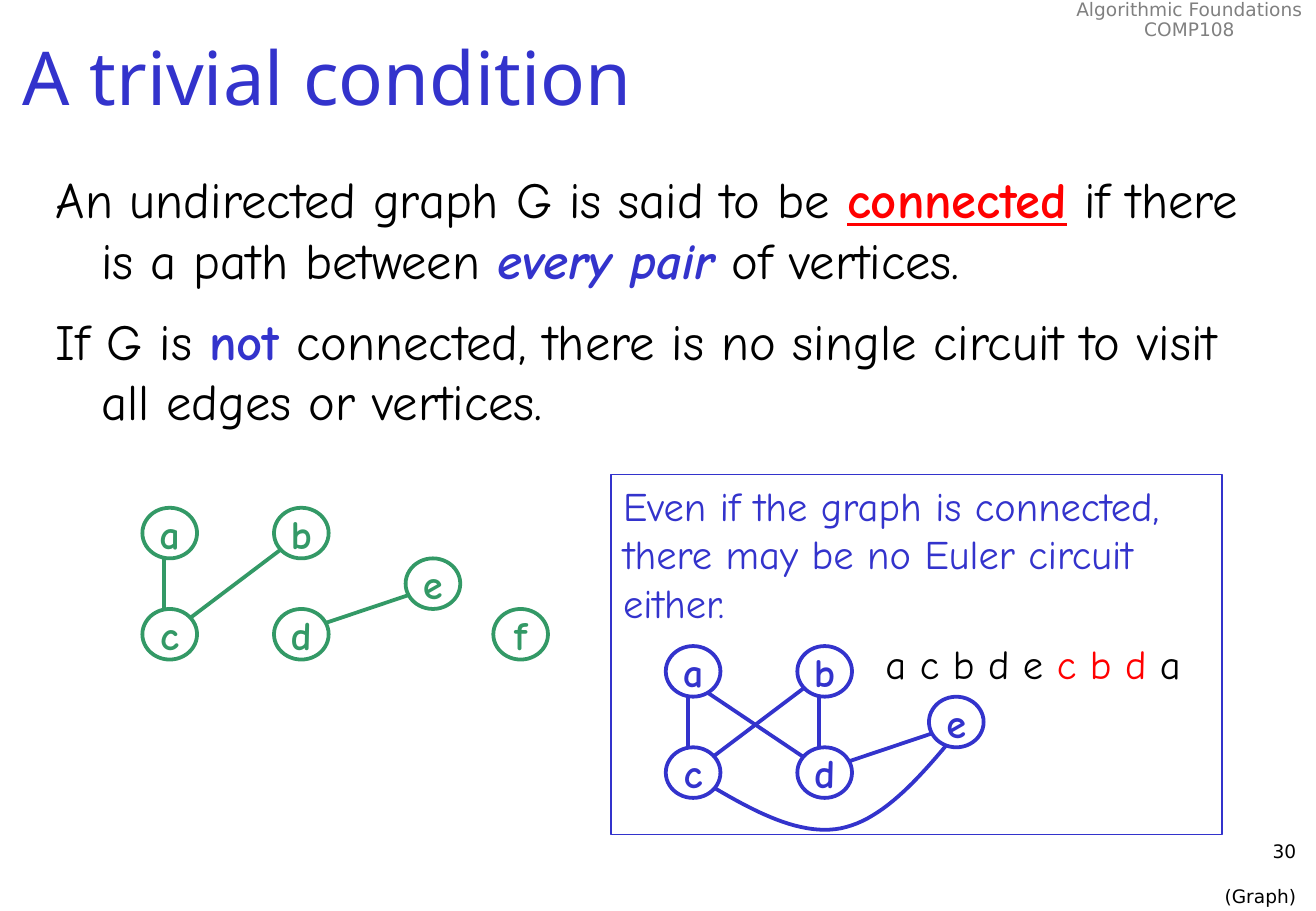
from dataclasses import dataclass

from lxml import etree
from pptx import Presentation
from pptx.dml.color import RGBColor
from pptx.enum import shapes, text
from pptx.oxml.ns import qn
from pptx.util import Pt


@dataclass(frozen=True)
class Theme:
    blue: str = "3333CC"
    green: str = "339966"
    red: str = "FF0000"
    black: str = "000000"
    grey: str = "808080"
    white: str = "FFFFFF"
    title_font: str = "Noto Sans"
    body_font: str = "Comic Neue"
    label_font: str = "DejaVu Sans"
    title: int = 44
    body: int = 30
    note: int = 24
    label: int = 11
    edge: float = 2.25
    frame: float = 0.75


T = Theme()
LEFT, CENTER, RIGHT = text.PP_ALIGN.LEFT, text.PP_ALIGN.CENTER, text.PP_ALIGN.RIGHT
NODE_W, NODE_H = 32.4, 30
COL, ROW = 78, 60
NODES = {"a": (0, 0), "b": (COL, 0), "c": (0, ROW), "d": (COL, ROW),
         "e": (2 * COL, ROW / 2), "f": (208, ROW)}


def rgb(color):
    return RGBColor.from_string(color)


def style(font, name, size, color, bold=False):
    font.name, font.size, font.bold = name, Pt(size), bold
    font.color.rgb = rgb(color)


def add_text(s, box, wrap=True):
    tf = s.shapes.add_textbox(*map(Pt, box)).text_frame
    tf.word_wrap = wrap
    return tf


def add_lines(tf, lines, align, *font):
    """Fill the frame with one paragraph per line, all in the same font."""
    for i, line in enumerate(lines):
        p = tf.paragraphs[0] if i == 0 else tf.add_paragraph()
        p.text, p.alignment = line, align
        style(p.font, *font)
    return tf.paragraphs


def add_runs(p, runs):
    """Add (text, font changes) pairs to a paragraph."""
    for words, look in runs:
        r = p.add_run()
        r.text = words
        if "color" in look:
            r.font.color.rgb = rgb(look["color"])
        for flag in ("bold", "italic", "underline"):
            if flag in look:
                setattr(r.font, flag, True)


def add_box(s, kind, box, color, width):
    sp = s.shapes.add_shape(kind, *map(Pt, box))
    sp.shadow.inherit = False
    sp.fill.solid()
    sp.fill.fore_color.rgb = rgb(T.white)
    sp.line.color.rgb, sp.line.width = rgb(color), Pt(width)
    return sp


def course_header(s, box):
    tf = add_text(s, box, wrap=False)
    for p in add_lines(tf, ["Algorithmic Foundations", "COMP108"], CENTER,
                       T.label_font, T.label, T.grey):
        p.line_spacing = 0.9


def page_footer(s, box):
    lines = add_lines(add_text(s, box), ["30", "(Graph)"], RIGHT,
                      T.label_font, T.label, T.black)
    lines[1].space_before = Pt(13)


def title(s, box):
    tf = add_text(s, box)
    tf.vertical_anchor = text.MSO_ANCHOR.MIDDLE
    add_lines(tf, ["A trivial condition"], LEFT, T.title_font, T.title, T.blue)


def definitions(s, box):
    paragraphs = [
        [("An undirected graph G is said to be ", {}),
         ("connected", dict(color=T.red, bold=True, underline=True)),
         (" if there is a path between ", {}),
         ("every pair", dict(color=T.blue, bold=True, italic=True)),
         (" of vertices.", {})],
        [("If G is ", {}),
         ("not", dict(color=T.blue, bold=True)),
         (" connected, there is no single circuit to visit all edges or vertices.", {})],
    ]
    tf = add_text(s, box)
    lines = add_lines(tf, [""] * len(paragraphs), LEFT, T.body_font, T.body, T.black)
    for p, runs in zip(lines, paragraphs):
        p.space_before = p.space_after = Pt(6)
        pPr = p._p.get_or_add_pPr()
        pPr.set("marL", str(Pt(27)))
        pPr.set("indent", str(Pt(-27)))
        add_runs(p, runs)


def edge(s, x, y, first, second, color):
    """Join two nodes; the first is the left or the upper one."""
    (x1, y1), (x2, y2) = NODES[first], NODES[second]
    start_y, end_y = (24, 12) if y1 < y2 else (12, 18)
    start_x = 13 if x1 == x2 else 19.5
    c = s.shapes.add_connector(
        shapes.MSO_CONNECTOR.STRAIGHT, Pt(x + x1 + start_x), Pt(y + y1 + start_y),
        Pt(x + x2 + 13), Pt(y + y2 + end_y))
    c.line.color.rgb, c.line.width = rgb(color), Pt(T.edge)
    etree.SubElement(c._element.spPr, qn("a:effectLst"))


def graph(s, x, y, names, edges, color):
    for first, second in edges:
        edge(s, x, y, first, second, color)
    for name in names:
        dx, dy = NODES[name]
        sp = add_box(s, shapes.MSO_SHAPE.OVAL, (x + dx, y + dy, NODE_W, NODE_H),
                     color, T.edge)
        tf = sp.text_frame
        tf.word_wrap, tf.vertical_anchor = False, text.MSO_ANCHOR.MIDDLE
        add_lines(tf, [name], CENTER, T.body_font, T.note, color, True)


def bezier(points, steps=24):
    """Points along a cubic curve, without its start."""
    for i in range(1, steps + 1):
        t = i / steps
        weights = ((1 - t) ** 3, 3 * t * (1 - t) ** 2, 3 * t * t * (1 - t), t ** 3)
        yield tuple(sum(w * pt[k] for w, pt in zip(weights, points)) for k in (0, 1))


def curved_edge(s, x, y, color):
    """Join c to e with a curve that passes below d."""
    start, low, end = (19.5, 78.5), (103.7, 108), (175, 48.3)
    curve = [*bezier([start, (48.3, 95.8), (77.8, 113), low]),
             *bezier([low, (129.6, 103), (152.6, 75.6), end])]
    builder = s.shapes.build_freeform(Pt(x + start[0]), Pt(y + start[1]))
    builder.add_line_segments([(Pt(x + px), Pt(y + py)) for px, py in curve], close=False)
    sp = builder.convert_to_shape()
    sp.shadow.inherit = False
    sp.fill.background()
    sp.line.color.rgb, sp.line.width = rgb(color), Pt(T.edge)


def euler_panel(s, box):
    x, y = box[:2]
    sp = add_box(s, shapes.MSO_SHAPE.RECTANGLE, box, T.blue, T.frame)
    tf = sp.text_frame
    tf.word_wrap, tf.vertical_anchor = True, text.MSO_ANCHOR.TOP
    add_lines(tf, ["Even if the graph is connected, there may be no Euler circuit either."],
              LEFT, T.body_font, T.note, T.blue)
    graph_x, graph_y = x + 32.4, y + 101.5
    curved_edge(s, graph_x, graph_y, T.blue)
    graph(s, graph_x, graph_y, "abcde", ["de", "ac", "bd", "ad", "cb"], T.blue)
    walk = add_text(s, (x + 155.5, y + 93.6, 190.8, 36), wrap=False)
    p = add_lines(walk, [""], LEFT, T.body_font, T.note, T.black)[0]
    add_runs(p, [("a c b d e ", {}), ("c b d", dict(color=T.red)), (" a", {})])


def main():
    prs = Presentation()
    prs.slide_width, prs.slide_height = Pt(780), Pt(540)
    s = prs.slides.add_slide(prs.slide_layouts[6])
    course_header(s, (630, -3, 150, 31))
    page_footer(s, (612.7, 494.6, 162.7, 36))
    title(s, (6.5, 0, 773.5, 90))
    definitions(s, (26, 96, 734.4, 432))
    graph(s, 84.4, 301, "abcdef", ["de", "ac", "cb"], T.green)
    euler_panel(s, (362.2, 281.5, 362.2, 213.1))
    prs.save("out.pptx")


if __name__ == "__main__":
    main()
